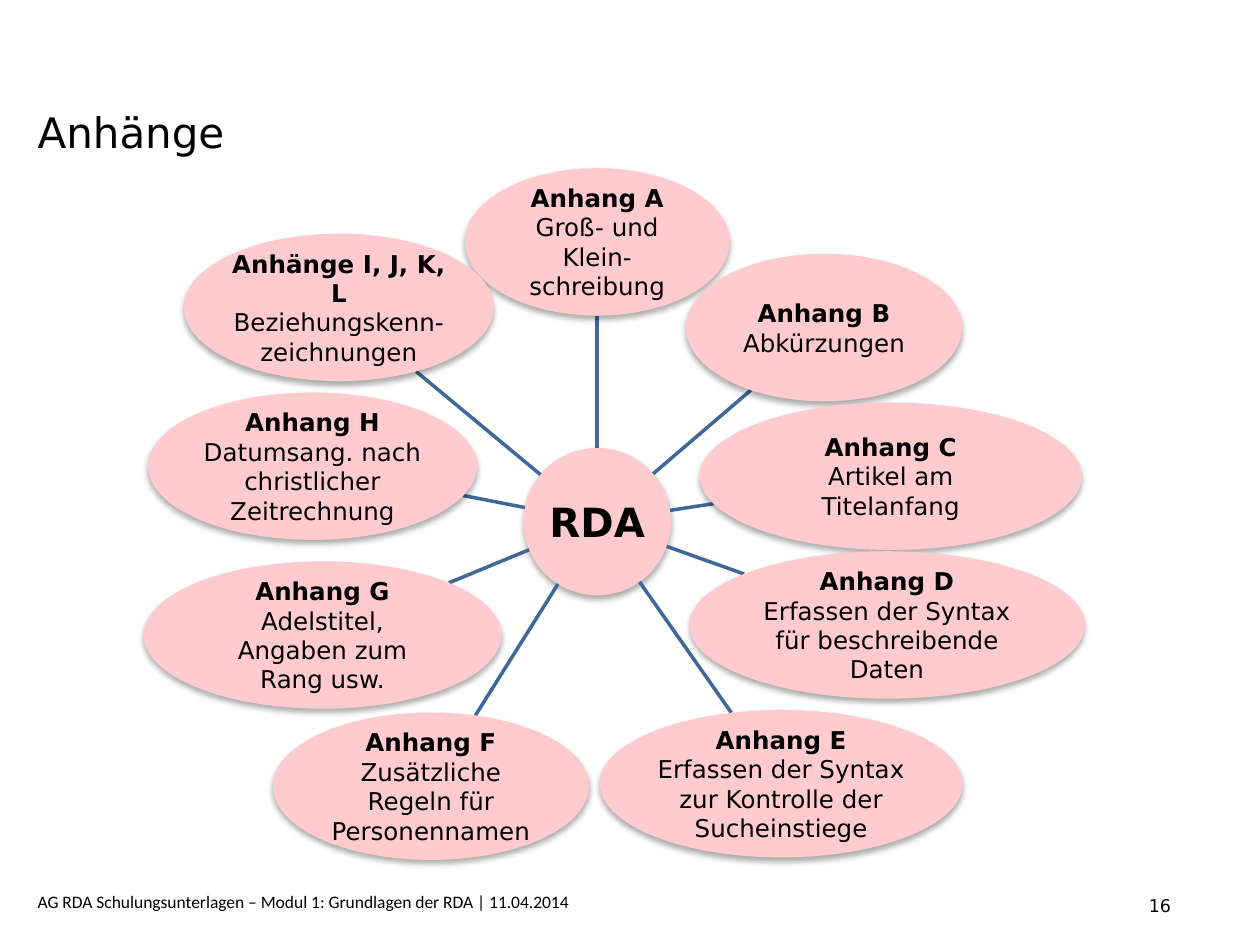
from copy import deepcopy
from math import hypot

from lxml.etree import SubElement
from pptx import Presentation
from pptx.dml.color import RGBColor
from pptx.enum.shapes import MSO_CONNECTOR, MSO_SHAPE
from pptx.enum.text import MSO_ANCHOR, PP_ALIGN
from pptx.oxml.ns import qn
from pptx.util import Inches, Pt

PINK = RGBColor(0xFF, 0xCB, 0xCF)
BLUE = RGBColor(0x3F, 0x67, 0x97)
BLACK = RGBColor(0x00, 0x00, 0x00)

HUB_X, HUB_Y = 4.74, 4.14
BUBBLE_HEIGHT = 1.17

# Centre x, centre y, width, text
APPENDICES = [
    (4.74, 1.92, 2.1, "Anhang A\vGroß- und\vKlein-\vschreibung"),
    (6.54, 2.6, 2.19, "Anhang B\vAbkürzungen"),
    (7.07, 3.78, 3.03, "Anhang C\vArtikel am\vTitelanfang"),
    (7.04, 4.96, 3.14, "Anhang D\vErfassen der Syntax\vfür beschreibende\vDaten"),
    (6.2, 6.22, 2.88,
     "Anhang E\vErfassen der Syntax zur Kontrolle der Sucheinstiege"),
    (3.42, 6.24, 2.51, "Anhang F\vZusätzliche\vRegeln für\vPersonennamen"),
    (2.56, 5.04, 2.84, "Anhang G\vAdelstitel,\vAngaben zum\vRang usw."),
    (2.48, 3.7, 2.61, "Anhang H\vDatumsang. nach\vchristlicher\vZeitrechnung"),
    (2.69, 2.44, 2.46, "Anhänge I, J, K, L\nBeziehungskenn-zeichnungen"),
]


class SlideBuilder:
    def __init__(self, slide, font="DejaVu Sans"):
        self.shapes = slide.shapes
        self.font = font

    def style_text(self, frame, size, font=None):
        for paragraph in frame.paragraphs:
            for run in paragraph.runs:
                run.font.name = font or self.font
                run.font.size = Pt(size)
                run.font.color.rgb = BLACK
            # Line breaks take the size of the text around them
            for line_break in paragraph._p.findall(qn("a:br")):
                line_break.append(deepcopy(paragraph.runs[0]._r.rPr))

    def label(self, left, top, width, height, text, size,
              font=None, anchor=MSO_ANCHOR.TOP):
        frame = self.shapes.add_textbox(
            Inches(left), Inches(top), Inches(width), Inches(height)).text_frame
        frame.word_wrap = True
        frame.vertical_anchor = anchor
        frame.text = text
        self.style_text(frame, size, font)

    def bubble(self, x, y, width, text, size=14, inset=0.01):
        """Draw an ellipse centred on x, y with its first line in bold."""
        oval = self.shapes.add_shape(
            MSO_SHAPE.OVAL, Inches(x - width / 2), Inches(y - BUBBLE_HEIGHT / 2),
            Inches(width), Inches(BUBBLE_HEIGHT))
        oval.fill.solid()
        oval.fill.fore_color.rgb = PINK
        oval.line.fill.background()
        self.drop_shadow(oval)

        frame = oval.text_frame
        frame.word_wrap = True
        frame.vertical_anchor = MSO_ANCHOR.MIDDLE
        frame.margin_left = frame.margin_right = Inches(inset)
        frame.margin_top = frame.margin_bottom = Inches(inset)
        frame.text = text
        for paragraph in frame.paragraphs:
            paragraph.alignment = PP_ALIGN.CENTER
        self.style_text(frame, size)
        frame.paragraphs[0].runs[0].font.bold = True

    def drop_shadow(self, shape):
        shape.shadow.inherit = False
        effects = shape._element.spPr.find(qn("a:effectLst"))
        shadow = SubElement(effects, qn("a:outerShdw"), blurRad=str(Pt(3.5)),
                            dist=str(Pt(2.2)), dir="5400000", rotWithShape="0")
        color = SubElement(shadow, qn("a:srgbClr"), val=str(BLACK))
        SubElement(color, qn("a:alpha"), val="32000")

    def spoke(self, x, y, width):
        """Join the hub's edge to a bubble's edge along the line of centres."""
        dx, dy = x - HUB_X, y - HUB_Y
        radius = BUBBLE_HEIGHT / 2
        start = radius / hypot(dx, dy)
        end = 1 - 1 / hypot(dx / (width / 2), dy / radius)
        line = self.shapes.add_connector(
            MSO_CONNECTOR.STRAIGHT,
            Inches(HUB_X + start * dx), Inches(HUB_Y + start * dy),
            Inches(HUB_X + end * dx), Inches(HUB_Y + end * dy))
        line.line.color.rgb = BLUE
        line.line.width = Pt(2)
        SubElement(line._element.spPr, qn("a:effectLst"))


def main():
    presentation = Presentation()
    presentation.slide_width = Inches(10)
    presentation.slide_height = Inches(7.5)
    builder = SlideBuilder(
        presentation.slides.add_slide(presentation.slide_layouts[6]))

    builder.label(9.02, 7.05, 0.79, 0.32, "16", 10)
    builder.label(
        0.2, 7.02, 7.01, 0.27,
        "AG RDA Schulungsunterlagen – Modul 1: Grundlagen der RDA | 11.04.2014",
        10, font="Calibri")
    builder.label(0.2, 0.62, 2.28, 0.85, "Anhänge", 24, anchor=MSO_ANCHOR.MIDDLE)

    builder.bubble(HUB_X, HUB_Y, BUBBLE_HEIGHT, "RDA", size=23, inset=0.02)
    for x, y, width, text in APPENDICES:
        builder.spoke(x, y, width)
        builder.bubble(x, y, width, text)

    presentation.save("out.pptx")


if __name__ == "__main__":
    main()
